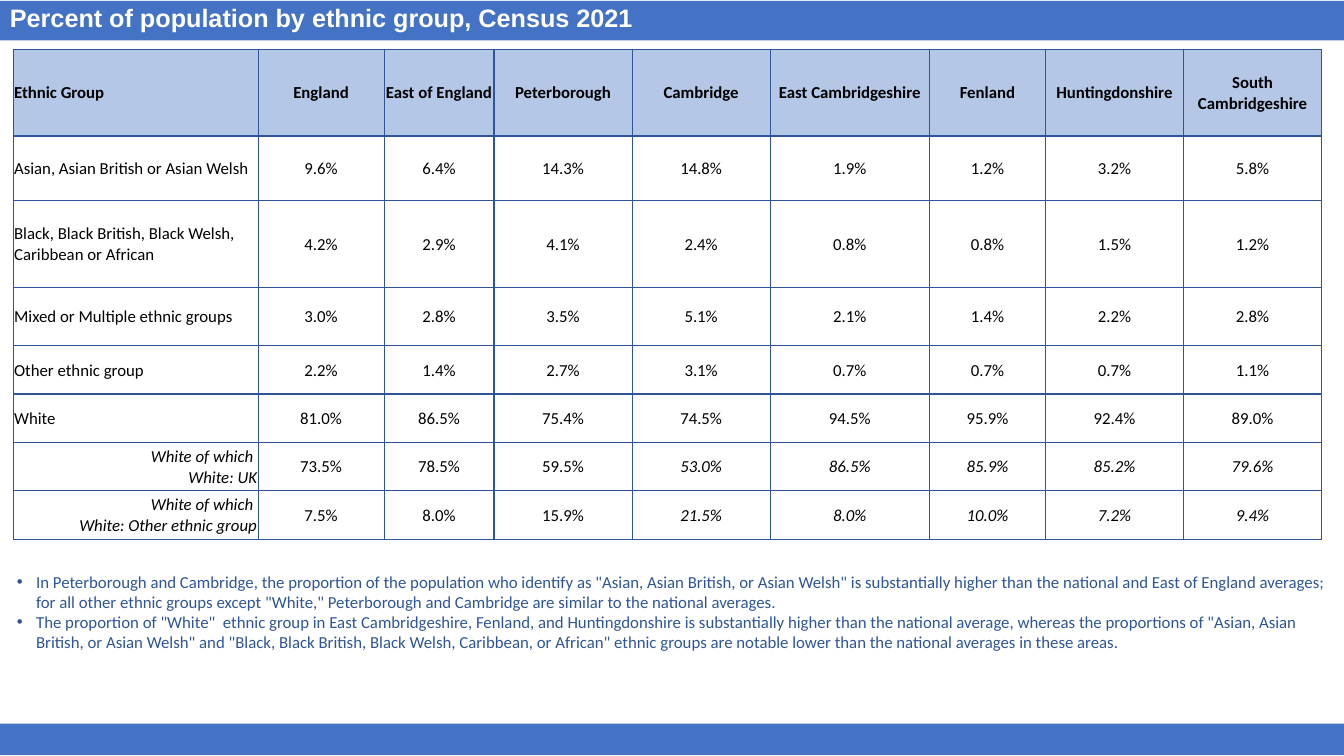
from lxml.etree import SubElement
from pptx import Presentation
from pptx.dml.color import RGBColor as Color
from pptx.enum.shapes import MSO_SHAPE as Preset
from pptx.enum.text import MSO_ANCHOR as Anchor, PP_ALIGN as Align
from pptx.oxml.ns import qn
from pptx.util import Inches, Pt

COLORS = {"band": "4472C4", "header": "B4C7E7", "accent": "2F5597", "text": "000000", "title": "FFFFFF"}

COLUMN_WIDTHS = [2.43, 1.25, 1.09, 1.37, 1.37, 1.58, 1.15, 1.37, 1.37]
ROW_HEIGHTS = [0.86, 0.64, 0.86, 0.58, 0.48, 0.48, 0.48, 0.48]
AREAS = ["Ethnic Group", "England", "East of England", "Peterborough", "Cambridge",
         "East Cambridgeshire", "Fenland", "Huntingdonshire", "South Cambridgeshire"]
SHARES = {
    "Asian, Asian British or Asian Welsh": [9.6, 6.4, 14.3, 14.8, 1.9, 1.2, 3.2, 5.8],
    "Black, Black British, Black Welsh, Caribbean or African": [4.2, 2.9, 4.1, 2.4, 0.8, 0.8, 1.5, 1.2],
    "Mixed or Multiple ethnic groups": [3.0, 2.8, 3.5, 5.1, 2.1, 1.4, 2.2, 2.8],
    "Other ethnic group": [2.2, 1.4, 2.7, 3.1, 0.7, 0.7, 0.7, 1.1],
    "White": [81.0, 86.5, 75.4, 74.5, 94.5, 95.9, 92.4, 89.0],
    "White of which \nWhite: UK": [73.5, 78.5, 59.5, 53.0, 86.5, 85.9, 85.2, 79.6],
    "White of which \nWhite: Other ethnic group": [7.5, 8.0, 15.9, 21.5, 8.0, 10.0, 7.2, 9.4],
}
FIRST_SUBGROUP_ROW = 6
FIRST_DISTRICT_COLUMN = 4
NOTES = [
    'In Peterborough and Cambridge, the proportion of the population who identify as "Asian, Asian British, '
    'or Asian Welsh" is substantially higher than the national and East of England averages; for all other '
    'ethnic groups except "White," Peterborough and Cambridge are similar to the national averages.',
    'The proportion of "White"  ethnic group in East Cambridgeshire, Fenland, and Huntingdonshire is '
    'substantially higher than the national average, whereas the proportions of "Asian, Asian British, or '
    'Asian Welsh" and "Black, Black British, Black Welsh, Caribbean, or African" ethnic groups are notable '
    'lower than the national averages in these areas.',
]


class SlideBuilder:
    font = {"name": "Calibri", "size": Pt(12), "bold": False, "italic": False}
    cell_margins = {"margin_left": Inches(0.01), "margin_right": Inches(0.01),
                    "margin_top": Inches(0.01), "margin_bottom": 0}

    def __init__(self, slide):
        self.slide = slide

    def fill_frame(self, frame, lines, color="text", align=Align.LEFT, spacing=1.0, **font):
        frame.text = "\n".join(lines)
        for paragraph in frame.paragraphs:
            paragraph.alignment = align
            paragraph.line_spacing = spacing
            for run in paragraph.runs:
                for name, value in {**self.font, **font}.items():
                    setattr(run.font, name, value)
                run.font.color.rgb = Color.from_string(COLORS[color])

    def band(self, top, height):
        shape = self.slide.shapes.add_shape(
            Preset.RECTANGLE, 0, Inches(top), Inches(13.33), Inches(height))
        shape.shadow.inherit = False
        shape.fill.solid()
        shape.fill.fore_color.rgb = Color.from_string(COLORS["band"])
        shape.line.fill.background()

    def text(self, left, top, width, height, lines, anchor=Anchor.TOP, **style):
        box = self.slide.shapes.add_textbox(*map(Inches, (left, top, width, height)))
        frame = box.text_frame
        frame.word_wrap = True
        frame.vertical_anchor = anchor
        self.fill_frame(frame, lines, **style)
        return frame

    def bullets(self, left, top, width, height, lines, **style):
        frame = self.text(left, top, width, height, lines, **style)
        indent = Inches(0.19)
        for paragraph in frame.paragraphs:
            properties = paragraph._p.get_or_add_pPr()
            properties.set("marL", str(indent))
            properties.set("indent", str(-indent))
            SubElement(properties, qn("a:buFont"), typeface="Arial")
            SubElement(properties, qn("a:buChar"), char="•")

    def borders(self, cell):
        properties = cell._tc.get_or_add_tcPr()
        for side in ("lnL", "lnR", "lnT", "lnB"):
            line = SubElement(properties, qn(f"a:{side}"), w=str(Pt(1)))
            fill = SubElement(line, qn("a:solidFill"))
            SubElement(fill, qn("a:srgbClr"), val=COLORS["accent"])

    def cell(self, cell, content, header=False, **style):
        for name, value in self.cell_margins.items():
            setattr(cell, name, value)
        cell.vertical_anchor = Anchor.MIDDLE
        self.borders(cell)
        if header:
            cell.fill.solid()
            cell.fill.fore_color.rgb = Color.from_string(COLORS["header"])
        else:
            cell.fill.background()
        self.fill_frame(cell.text_frame, content.split("\n"), bold=header, **style)

    def table(self, left, top, rows):
        table = self.slide.shapes.add_table(
            len(rows), len(COLUMN_WIDTHS), Inches(left), Inches(top),
            Inches(sum(COLUMN_WIDTHS)), Inches(sum(ROW_HEIGHTS))).table
        table.first_row = table.horz_banding = False
        for column, width in zip(table.columns, COLUMN_WIDTHS):
            column.width = Inches(width)
        for row, height in zip(table.rows, ROW_HEIGHTS):
            row.height = Inches(height)
        for row_index, row in enumerate(rows):
            subgroup = row_index >= FIRST_SUBGROUP_ROW
            for column_index, content in enumerate(row):
                label = column_index == 0
                label_align = Align.RIGHT if subgroup else Align.LEFT
                self.cell(table.cell(row_index, column_index), content, header=row_index == 0,
                          align=label_align if label else Align.CENTER,
                          italic=subgroup and (label or column_index >= FIRST_DISTRICT_COLUMN))


def main():
    presentation = Presentation()
    presentation.slide_width = Inches(13.33)
    presentation.slide_height = Inches(7.5)
    builder = SlideBuilder(presentation.slides.add_slide(presentation.slide_layouts[6]))
    builder.band(0.01, 0.39)
    builder.band(7.18, 0.31)
    rows = [AREAS] + [[group] + [f"{share:.1f}%" for share in shares] for group, shares in SHARES.items()]
    builder.table(0.13, 0.49, rows)
    builder.text(0, 0, 13.2, 0.39, ["Percent of population by ethnic group, Census 2021"],
                 anchor=Anchor.MIDDLE, color="title", spacing=0.9,
                 name="Arial", size=Pt(18), bold=True)
    builder.bullets(0.07, 5.62, 13.2, 0.91, NOTES, color="accent")
    presentation.save("out.pptx")


if __name__ == "__main__":
    main()
